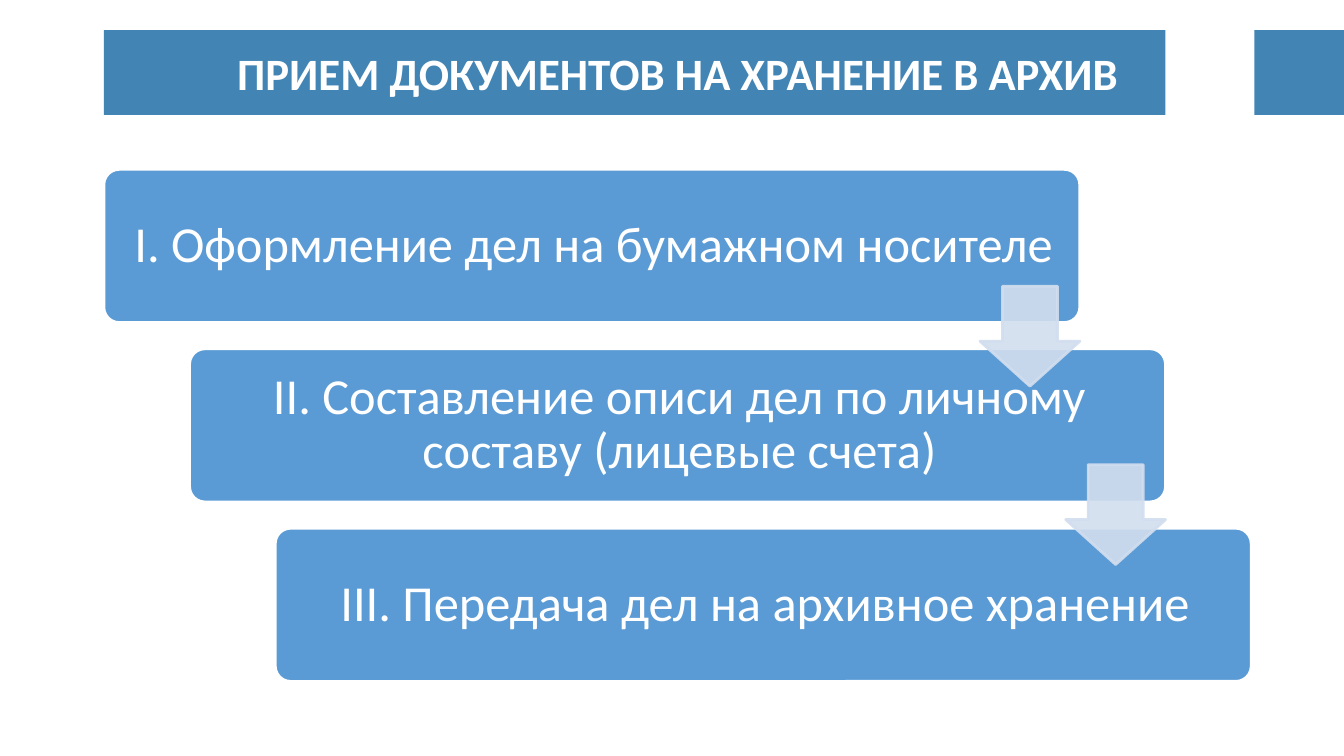
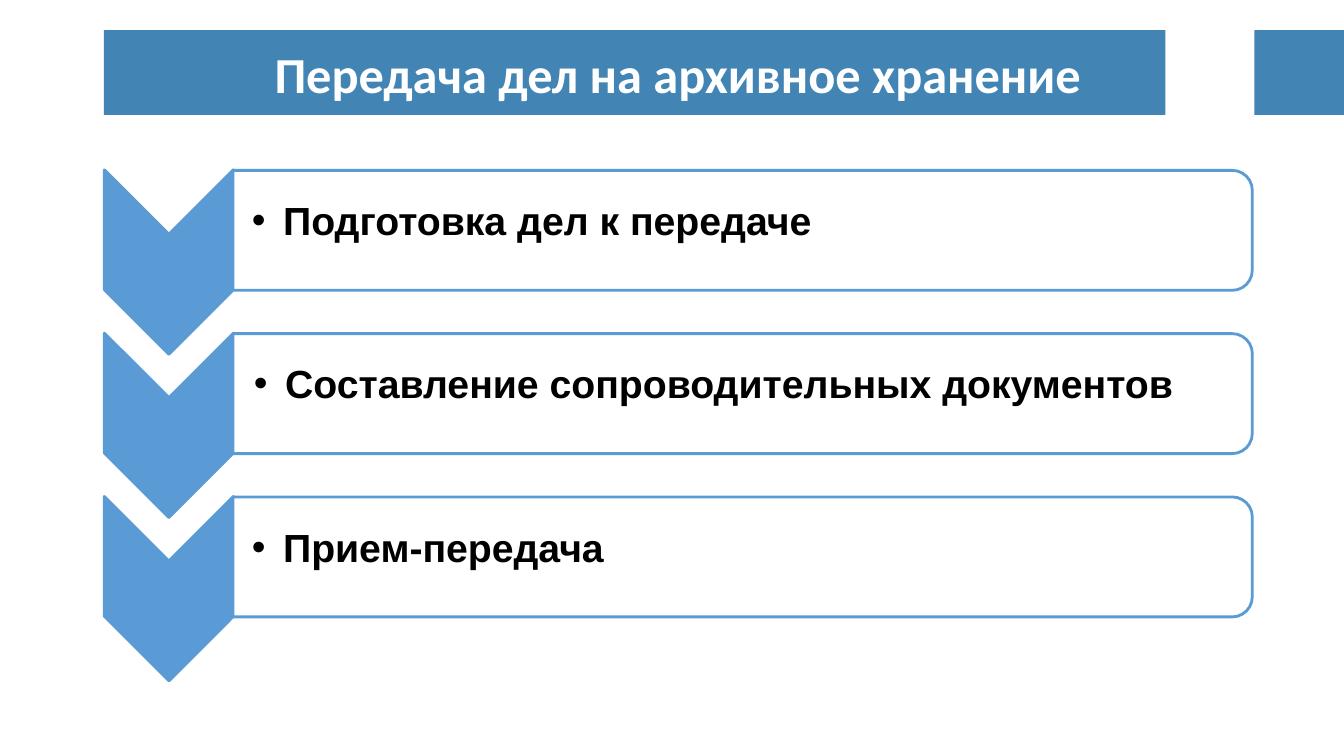
from dataclasses import dataclass

from lxml.etree import SubElement
from pptx import Presentation
from pptx.dml.color import RGBColor
from pptx.enum.shapes import MSO_SHAPE
from pptx.enum.text import MSO_ANCHOR, PP_ALIGN
from pptx.oxml.ns import qn
from pptx.util import Pt

PX = 9144  # 100 px to the inch


@dataclass(frozen=True)
class Theme:
    band: str = "4285B4"
    accent: str = "5B9BD5"
    arrow: str = "D2DEEF"
    white: str = "FFFFFF"
    black: str = "000000"
    display_font: str = "Calibri"
    list_font: str = "Arial"
    card_size: int = 36
    list_size: int = 28
    line_width: int = 2


theme = Theme()


def add_block(page, preset, frame, fill, line=None, adjust=(), rotation=0, opacity=100):
    block = page.shapes.add_shape(preset, *(value * PX for value in frame))
    block.shadow.inherit = False
    block.rotation = rotation
    for index, value in enumerate(adjust):
        block.adjustments[index] = value
    block.fill.solid()
    block.fill.fore_color.rgb = RGBColor.from_string(fill)
    if line:
        block.line.color.rgb = RGBColor.from_string(line)
        block.line.width = Pt(theme.line_width)
    else:
        block.line.fill.background()
    if opacity < 100:
        for color in block.element.iter(qn("a:srgbClr")):
            SubElement(color, qn("a:alpha")).set("val", str(opacity * 1000))
    return block


def write_text(box, text, *, size, color, font=theme.display_font, bold=False,
               align=PP_ALIGN.CENTER, anchor=MSO_ANCHOR.MIDDLE, insets=(10, 5, 10, 5),
               line_spacing=None, space_after=None, bullet_indent=0):
    frame = box.text_frame
    frame.word_wrap = True
    frame.vertical_anchor = anchor
    (frame.margin_left, frame.margin_top,
     frame.margin_right, frame.margin_bottom) = (inset * PX for inset in insets)
    para = frame.paragraphs[0]
    para.alignment = align
    if line_spacing:
        para.line_spacing = line_spacing
    if space_after:
        para.space_after = Pt(space_after)
    if bullet_indent:
        properties = para._p.get_or_add_pPr()
        properties.set("marL", str(bullet_indent * PX))
        properties.set("indent", str(-bullet_indent * PX))
        SubElement(properties, qn("a:buFont")).set("typeface", theme.list_font)
        SubElement(properties, qn("a:buChar")).set("char", "•")
    span = para.add_run()
    span.text = text
    span.font.name = font
    span.font.size = Pt(size)
    span.font.bold = bold
    span.font.color.rgb = RGBColor.from_string(color)


deck = Presentation()
deck.slide_width, deck.slide_height = 1333 * PX, 750 * PX
blank = deck.slide_layouts[6]

# Pages with their titles
pages = []
for title, size in (("ПРИЕМ ДОКУМЕНТОВ НА ХРАНЕНИЕ В АРХИВ", 32),
                    ("Передача дел на архивное хранение", 36)):
    page = deck.slides.add_slide(blank)
    box = page.shapes.add_textbox(191 * PX, 30 * PX, 963 * PX, 85 * PX)
    write_text(box, title, size=size, color=theme.white, bold=True)
    pages.append(page)
steps_page, transfer_page = pages

# Header bands, moved to the layout so that both pages share them
for left, width in ((103, 1053), (1244, 89)):
    band = add_block(steps_page, MSO_SHAPE.RECTANGLE, (left, 30, width, 84), theme.band)
    blank.shapes.element.append(band.element)

# Slide 1: staircase of cards
steps = ["I. Оформление дел на бумажном носителе",
         "II. Составление описи дел по личному составу (лицевые счета)",
         "III. Передача дел на архивное хранение"]
for index, step in enumerate(steps):
    card = add_block(steps_page, MSO_SHAPE.ROUNDED_RECTANGLE,
                     (103 + 85 * index, 168 + 178 * index, 968, 152),
                     theme.accent, theme.white, adjust=(0.1,))
    write_text(card, step, size=theme.card_size, color=theme.white,
               insets=(19, 19, 15, 19), line_spacing=0.9, space_after=12.6)

# Arrows from each card to the next
for index in range(len(steps) - 1):
    add_block(steps_page, MSO_SHAPE.DOWN_ARROW,
              (972 + 85 * index, 284 + 177 * index, 99, 99),
              theme.arrow, theme.arrow, adjust=(0.55, 0.45), opacity=90)

# Slide 2: chevron list, each frame given before its quarter turn
items = [("Подготовка дел к передаче", 240),
         ("Составление сопроводительных документов", 242),
         ("Прием-передача", 240)]
for index, (item, left) in enumerate(items):
    drop = 162 * index
    add_block(transfer_page, MSO_SHAPE.CHEVRON, (76, 196 + drop, 183, 128),
              theme.accent, theme.accent, adjust=(0.5,), rotation=90)
    add_block(transfer_page, MSO_SHAPE.ROUND_2_SAME_RECTANGLE,
              (677, -277 + drop, 119, 1011),
              theme.white, theme.accent, adjust=(0.167, 0), rotation=90)
    box = transfer_page.shapes.add_textbox(left * PX, (190 + drop) * PX, 988 * PX, 57 * PX)
    write_text(box, item, size=theme.list_size, color=theme.black, font=theme.list_font,
               bold=True, align=PP_ALIGN.LEFT, anchor=MSO_ANCHOR.TOP, bullet_indent=31)

deck.save("out.pptx")
